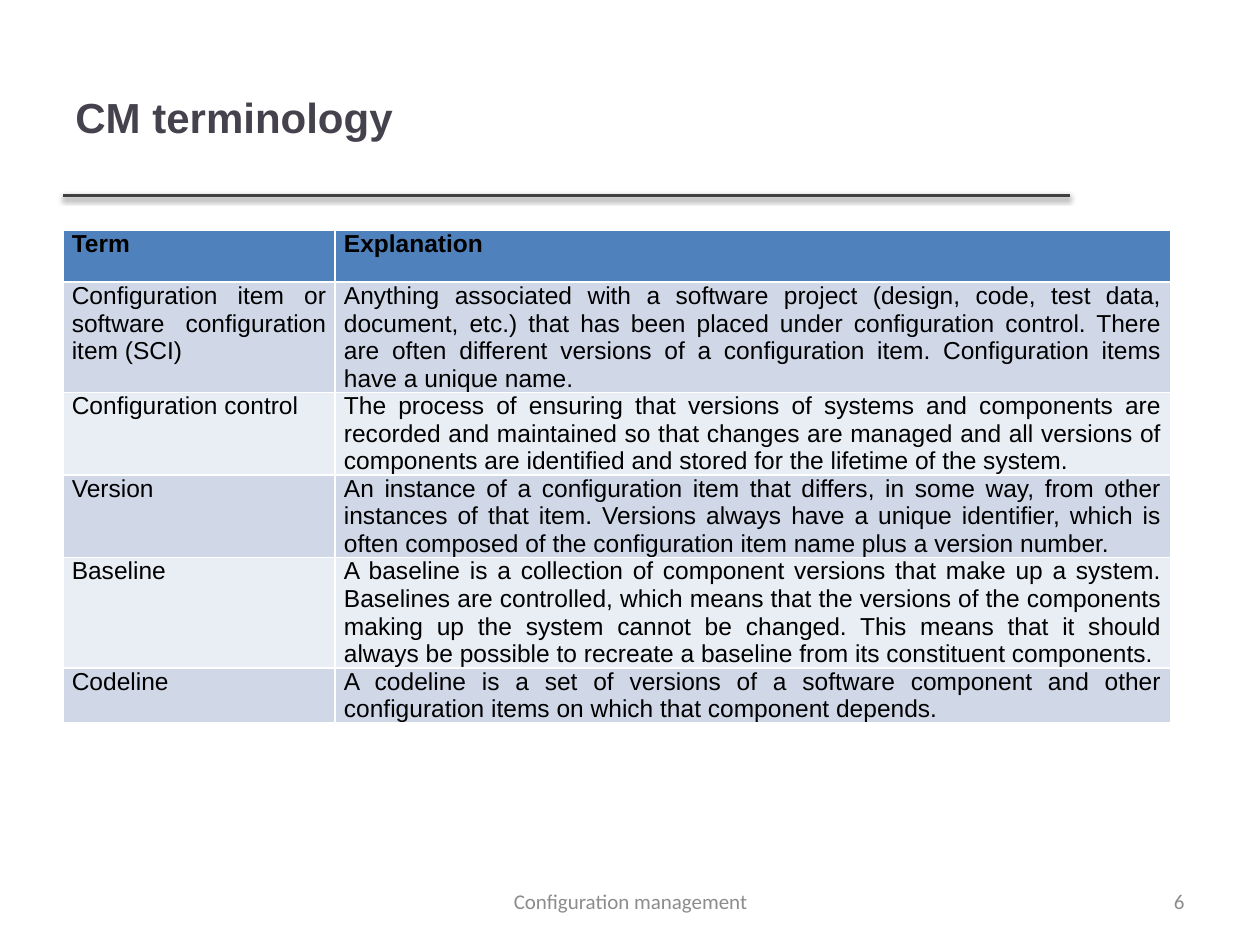
from dataclasses import dataclass

from lxml.etree import SubElement
from pptx import Presentation
from pptx.dml.color import RGBColor
from pptx.enum.shapes import MSO_CONNECTOR
from pptx.enum.text import MSO_ANCHOR, PP_ALIGN
from pptx.oxml.ns import qn
from pptx.util import Inches, Pt

LEFT = 0.5
RULE_Y = 1.55
TABLE_TOP = 1.83
COLUMN_WIDTHS = (2.16, 6.63)
ROW_HEIGHT = 0.41
HEADER_FILL = "4F81BD"
BAND_FILLS = ("D0D8E8", "E9EDF4")


@dataclass(frozen=True)
class Label:
    text: str
    box: tuple[float, float, float, float]
    size: int
    font: str
    color: str
    align: PP_ALIGN
    bold: bool = False


LABELS = (
    Label("CM terminology", (LEFT, 0.3, 7.98, 1.25), 24, "Arial", "46424D", PP_ALIGN.LEFT, True),
    Label("6", (7.17, 6.95, 2.33, 0.4), 12, "Calibri", "8C8C8C", PP_ALIGN.RIGHT),
    Label("Configuration management", (3.42, 6.95, 3.17, 0.4), 12, "Calibri", "8C8C8C", PP_ALIGN.CENTER),
)

TERMS = (
    ("Term", "Explanation"),
    ("Configuration item or software configuration item (SCI)",
     "Anything associated with a software project (design, code, test data, document, etc.) "
     "that has been placed under configuration control. There are often different versions "
     "of a configuration item. Configuration items have a unique name."),
    ("Configuration control",
     "The process of ensuring that versions of systems and components are recorded and "
     "maintained so that changes are managed and all versions of components are identified "
     "and stored for the lifetime of the system."),
    ("Version",
     "An instance of a configuration item that differs, in some way, from other instances "
     "of that item. Versions always have a unique identifier, which is often composed of "
     "the configuration item name plus a version number."),
    ("Baseline",
     "A baseline is a collection of component versions that make up a system. Baselines are "
     "controlled, which means that the versions of the components making up the system "
     "cannot be changed. This means that it should always be possible to recreate a "
     "baseline from its constituent components."),
    ("Codeline",
     "A codeline is a set of versions of a software component and other configuration items "
     "on which that component depends."),
)


def rgb(value: str) -> RGBColor:
    return RGBColor.from_string(value)


def style(paragraph, size: int, font: str, color: str, align: PP_ALIGN, bold: bool) -> None:
    paragraph.alignment = align
    paragraph.font.size = Pt(size)
    paragraph.font.name = font
    paragraph.font.bold = bold
    paragraph.font.color.rgb = rgb(color)


def draw_label(slide, label: Label) -> None:
    frame = slide.shapes.add_textbox(*map(Inches, label.box)).text_frame
    frame.word_wrap = True
    frame.vertical_anchor = MSO_ANCHOR.MIDDLE
    frame.text = label.text
    style(frame.paragraphs[0], label.size, label.font, label.color, label.align, label.bold)


def draw_title_rule(slide) -> None:
    rule = slide.shapes.add_connector(
        MSO_CONNECTOR.STRAIGHT, Inches(LEFT), Inches(RULE_Y), Inches(8.49), Inches(RULE_Y))
    rule.line.color.rgb = rgb("404040")
    rule.line.width = Pt(2)
    # Soft shadow straight below the rule
    effects = SubElement(rule._element.spPr, qn("a:effectLst"))
    shadow = SubElement(effects, qn("a:outerShdw"), blurRad=str(Pt(3.1)), dist=str(Pt(1.6)),
                        dir="5400000", rotWithShape="0")
    black = SubElement(shadow, qn("a:srgbClr"), val="000000")
    SubElement(black, qn("a:alpha"), val="38000")


def draw_terms(slide) -> None:
    table = slide.shapes.add_table(
        len(TERMS), len(COLUMN_WIDTHS), Inches(LEFT), Inches(TABLE_TOP),
        Inches(sum(COLUMN_WIDTHS)), Inches(ROW_HEIGHT * len(TERMS))).table
    for column, width in zip(table.columns, COLUMN_WIDTHS):
        column.width = Inches(width)
    for index, texts in enumerate(TERMS):
        is_header = index == 0
        table.rows[index].height = Inches(ROW_HEIGHT)
        for cell, text in zip(table.rows[index].cells, texts):
            cell.margin_left = cell.margin_right = Inches(0.07)
            cell.margin_top = cell.margin_bottom = 0
            cell.fill.solid()
            cell.fill.fore_color.rgb = rgb(HEADER_FILL if is_header else BAND_FILLS[(index - 1) % 2])
            cell.text = text
            paragraph = cell.text_frame.paragraphs[0]
            paragraph.space_after = Pt(2)
            style(paragraph, 14, "Arial", "000000", PP_ALIGN.JUSTIFY, is_header)


def main() -> None:
    deck = Presentation()
    deck.slide_width, deck.slide_height = Inches(10), Inches(7.5)
    slide = deck.slides.add_slide(deck.slide_layouts[6])
    draw_title_rule(slide)
    draw_terms(slide)
    # Title, page number and footer
    for label in LABELS:
        draw_label(slide, label)
    deck.save("out.pptx")


if __name__ == "__main__":
    main()
